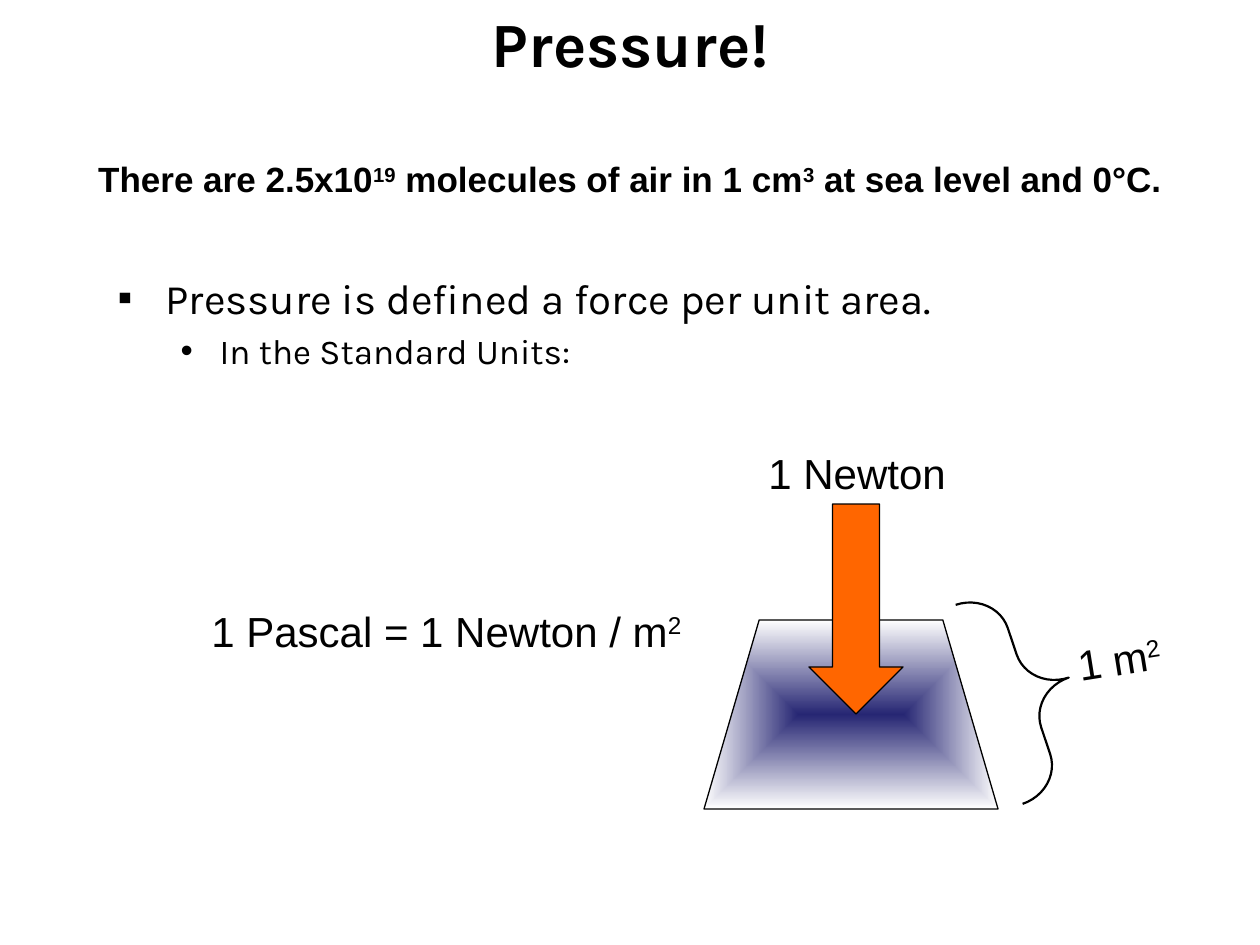
"""Build the slide on pressure as force per unit area."""
from lxml.etree import SubElement, fromstring
from pptx import Presentation
from pptx.dml.color import RGBColor
from pptx.enum.shapes import MSO_SHAPE
from pptx.enum.text import MSO_ANCHOR, MSO_AUTO_SIZE, PP_ALIGN
from pptx.oxml.ns import nsdecls, qn
from pptx.util import Pt

THEME = {
    "ink": "000000", "paper": "FFFFFF", "arrow": "FF6600", "core": "262673",
    "head": {"name": "Karla", "size": Pt(36), "bold": True},
    "point": {"name": "Karla", "size": Pt(24), "bold": False},
    "sub": {"name": "Karla", "size": Pt(20), "bold": False},
    "fact": {"name": "Arial", "size": Pt(20), "bold": True},
    "label": {"name": "Arial", "size": Pt(24), "bold": False},
}
SCALE = 914400 / 126
TITLE = ("Pressure!", (95, 0, 1071, 84))
FACT = ("There are 2.5x10^19^ molecules of air in 1 cm^3^ at sea level and 0°C.",
        (63, 136, 1134, 158))
BODY = (105, 262, 1071, 179)
POINTS = [
    ("Pressure is defined a force per unit area.", "point", 0, "▪", 48, -48, 0),
    ("In the Standard Units:", "sub", 1, "•", 102, -39, 4),
]
LABELS = [
    ("1 Newton", (756, 441, 204, 63), 0),
    ("1 m^2^", (1065, 627, 112, 63), 350.9),
    ("1 Pascal = 1 Newton / m^2^", (199, 599, 502, 63), 0),
]
FORMS = [
    (MSO_SHAPE.TRAPEZOID, (704, 620, 294, 189), 0, [0.292], "glow", 0.75),
    (MSO_SHAPE.DOWN_ARROW, (809, 504, 94, 210), 0, [], "arrow", 0.75),
    (MSO_SHAPE.RIGHT_BRACE, (987, 586, 84, 210), 341.4, [0.459, 0.5], None, 1.25),
]


def emu(px):
    return round(px * SCALE)


def tone(key):
    return RGBColor.from_string(THEME[key])


def apply(item, values):
    for name, value in values.items():
        setattr(item, name, value)


def place(shape, box):
    apply(shape, dict(zip(("left", "top", "width", "height"), map(emu, box))))


def write(para, text, style):
    for at, part in enumerate(text.split("^")):
        if part:
            run = para.add_run()
            run.text = part
            apply(run.font, THEME[style])
            run.font.color.rgb = tone("ink")
            if at % 2:
                run._r.get_or_add_rPr().set("baseline", "30000")


def add_text(slide, text, box, style, **frame):
    shape = slide.shapes.add_textbox(*map(emu, box))
    apply(shape.text_frame, frame)
    write(shape.text_frame.paragraphs[0], text, style)
    return shape


def add_glow(shape):
    stops = "".join(
        f'<a:gs pos="{pos}"><a:srgbClr val="{THEME[key]}"/></a:gs>'
        for pos, key in ((0, "core"), (100000, "paper")))
    grad = fromstring(
        f'<a:gradFill {nsdecls("a")} rotWithShape="1"><a:gsLst>{stops}</a:gsLst>'
        '<a:path path="shape"><a:fillToRect l="50000" t="50000" r="50000" '
        'b="50000"/></a:path></a:gradFill>')
    shape._element.spPr.find(qn("a:prstGeom")).addnext(grad)


def add_form(slide, kind, box, turn, adjust, fill, width):
    shape = slide.shapes.add_shape(kind, *map(emu, box))
    shape.shadow.inherit = False
    shape.rotation = turn
    for at, value in enumerate(adjust):
        shape.adjustments[at] = value
    if fill == "glow":
        add_glow(shape)
    elif fill:
        shape.fill.solid()
        shape.fill.fore_color.rgb = tone(fill)
    else:
        shape.fill.background()
    shape.line.color.rgb = tone("ink")
    shape.line.width = Pt(width)


def add_title(slide):
    text, box = TITLE
    title = slide.shapes.title
    place(title, box)
    title.fill.solid()
    title.fill.fore_color.rgb = tone("paper")
    apply(title.text_frame, {"vertical_anchor": MSO_ANCHOR.MIDDLE,
                             "auto_size": MSO_AUTO_SIZE.NONE})
    para = title.text_frame.paragraphs[0]
    para.alignment = PP_ALIGN.CENTER
    write(para, text, "head")


def add_points(slide):
    body = slide.placeholders[1]
    place(body, BODY)
    frame = body.text_frame
    apply(frame, {"auto_size": MSO_AUTO_SIZE.NONE, "margin_top": emu(10)})
    for at, (text, style, level, mark, left, hang, gap) in enumerate(POINTS):
        para = frame.add_paragraph() if at else frame.paragraphs[0]
        props = para._p.get_or_add_pPr()
        props.set("marL", str(emu(left)))
        props.set("indent", str(emu(hang)))
        SubElement(props, qn("a:buChar")).set("char", mark)
        apply(para, {"level": level, "space_before": Pt(gap)})
        write(para, text, style)


def main():
    deck = Presentation()
    apply(deck, {"slide_width": emu(1260), "slide_height": emu(945)})
    slide = deck.slides.add_slide(deck.slide_layouts[1])
    add_title(slide)
    add_points(slide)
    fact = add_text(slide, *FACT, "fact", word_wrap=True, margin_top=emu(30))
    apply(fact.text_frame.paragraphs[0],
          {"alignment": PP_ALIGN.CENTER, "line_spacing": 0.8})
    for form in FORMS:
        add_form(slide, *form)
    for text, box, turn in LABELS:
        label = add_text(slide, text, box, "label", word_wrap=False,
                         auto_size=MSO_AUTO_SIZE.SHAPE_TO_FIT_TEXT)
        label.rotation = turn
    deck.save("out.pptx")


if __name__ == "__main__":
    main()
